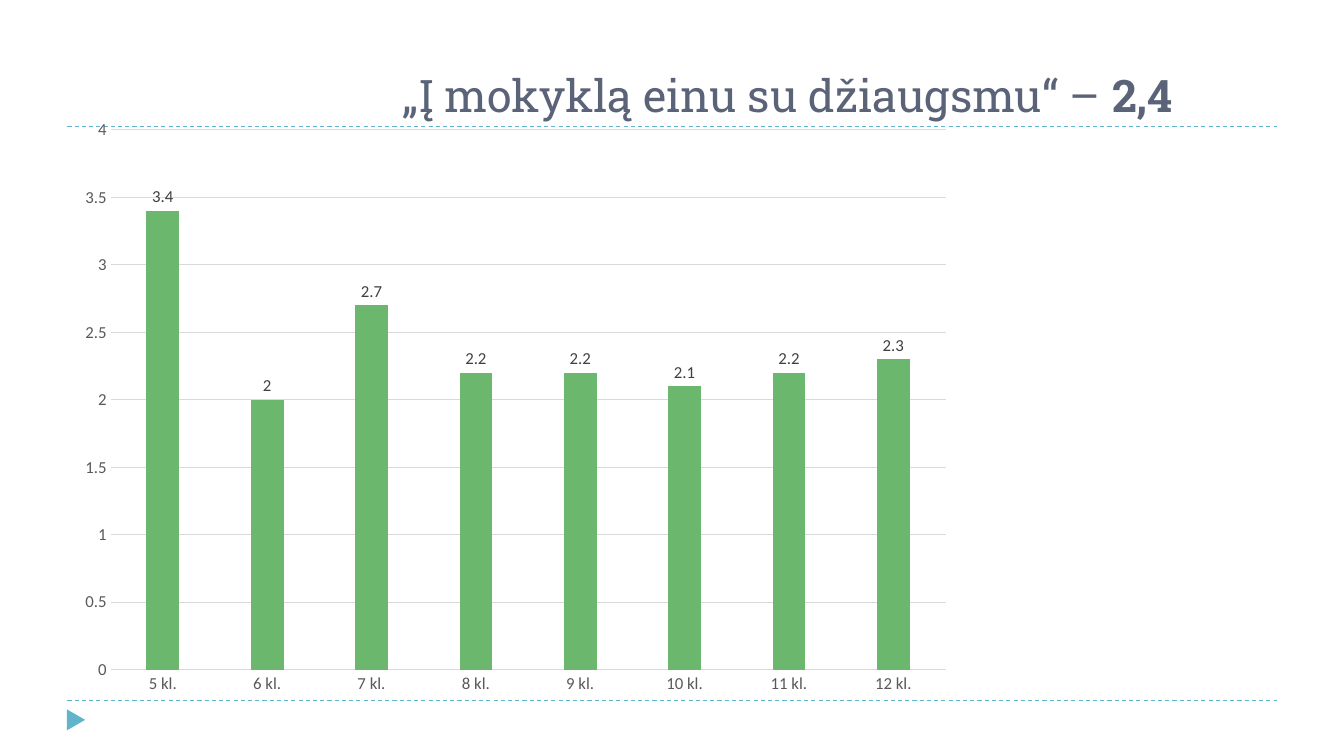
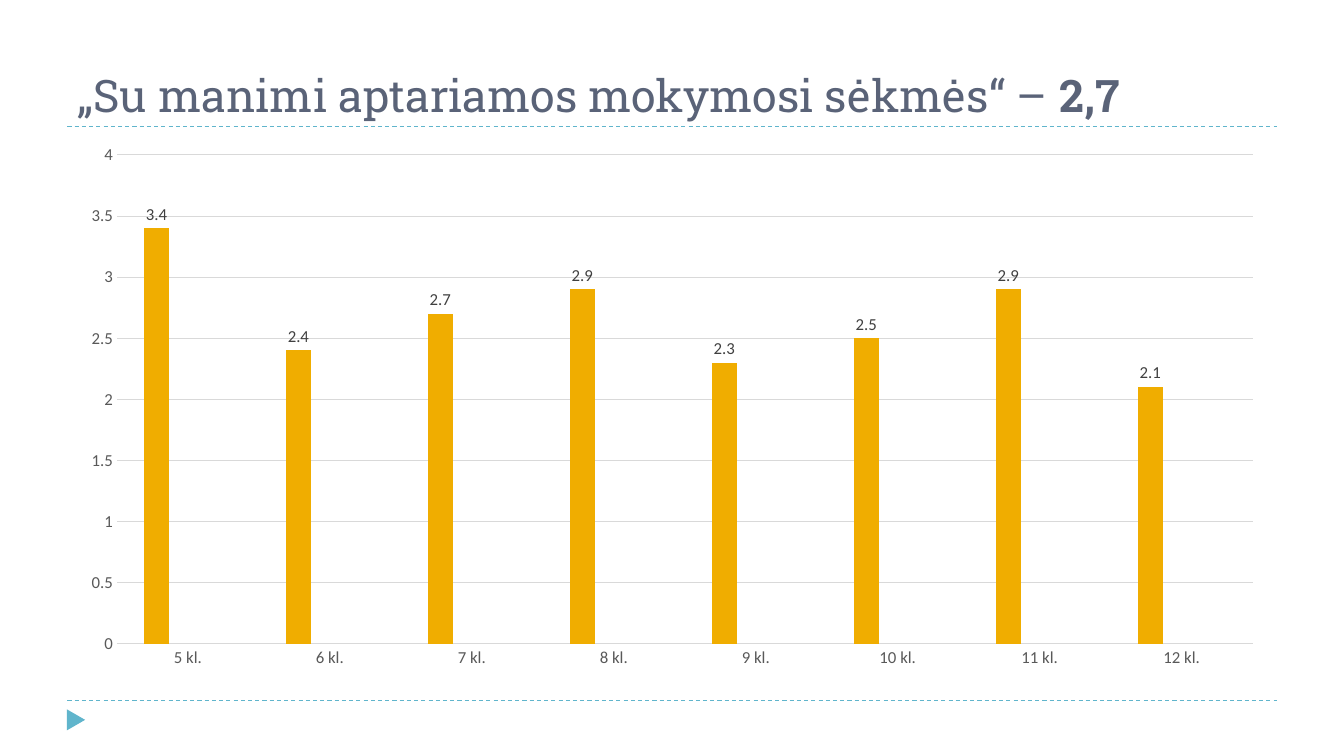
"""Build two slides with column charts of school survey scores by class."""
import dataclasses

import lxml.etree
import pptx
import pptx.chart.data
import pptx.chart.series
import pptx.dml.color
import pptx.dml.line
import pptx.enum.chart
import pptx.enum.dml
import pptx.enum.shapes
import pptx.enum.text
import pptx.oxml.ns
import pptx.shapes.base
import pptx.slide
import pptx.text.text
import pptx.util

Cm = pptx.util.Cm
Pt = pptx.util.Pt
Align = pptx.enum.text.PP_ALIGN

INK = "5A6378"
TEAL = "60B5CC"
ROSE = "E66C7D"
GREEN = "6BB76D"
AMBER = "F0AD00"
GRID = "D9D9D9"
AXIS = "595959"
LABEL = "404040"

LEFT, WIDTH = 1.7, 30.48
RULES = (3.18, 17.65)
CLASSES = [f"{grade} kl." for grade in range(5, 13)]


@dataclasses.dataclass(frozen=True)
class Page:
    title: str
    score: str
    align: Align
    indent: float
    box: tuple[float, float, float, float]
    values: tuple[float, ...]
    colors: tuple[str, ...]


PAGES = (
    Page("„Į mokyklą einu su džiaugsmu“ – ", "2,4", Align.CENTER, 5.84,
         (LEFT, 2.72, 22.58, 15.06),
         (3.4, 2, 2.7, 2.2, 2.2, 2.1, 2.2, 2.3), (GREEN,)),
    Page("„Su manimi aptariamos mokymosi sėkmės“ – ", "2,7", Align.LEFT, 0,
         (LEFT, 3.38, WIDTH, 13.72),
         (3.4, 2.4, 2.7, 2.9, 2.3, 2.5, 2.9, 2.1), (AMBER, TEAL, ROSE)),
)


def color(code: str) -> pptx.dml.color.RGBColor:
    return pptx.dml.color.RGBColor.from_string(code)


def style(font: pptx.text.text.Font, name: str, size: float, code: str) -> None:
    font.name = name
    font.size = Pt(size)
    font.color.rgb = color(code)


def stroke(line: pptx.dml.line.LineFormat, code: str) -> None:
    line.color.rgb = color(code)
    line.width = Pt(0.75)


def place(shape: pptx.shapes.base.BaseShape, *box: float) -> None:
    shape.left, shape.top, shape.width, shape.height = map(Cm, box)


def frame(layout: pptx.slide.SlideLayout, slide: pptx.slide.Slide) -> None:
    title = layout.placeholders[0]
    place(title, LEFT, 0.43, WIDTH, 2.75)
    text = title.text_frame
    text.vertical_anchor = pptx.enum.text.MSO_ANCHOR.BOTTOM
    text.auto_size = pptx.enum.text.MSO_AUTO_SIZE.NONE
    text.word_wrap = True

    parts = []
    for top in RULES:
        rule = slide.shapes.add_connector(
            pptx.enum.shapes.MSO_CONNECTOR.STRAIGHT,
            Cm(LEFT), Cm(top), Cm(LEFT + WIDTH), Cm(top))
        stroke(rule.line, TEAL)
        rule.line.dash_style = pptx.enum.dml.MSO_LINE.DASH
        lxml.etree.SubElement(rule.element.spPr, pptx.oxml.ns.qn("a:effectLst"))
        parts.append(rule)

    arrow = slide.shapes.add_shape(
        pptx.enum.shapes.MSO_SHAPE.ISOSCELES_TRIANGLE,
        Cm(1.65), Cm(17.91), Cm(0.53), Cm(0.46))
    arrow.rotation = 90
    arrow.shadow.inherit = False
    arrow.fill.solid()
    arrow.fill.fore_color.rgb = color(TEAL)
    arrow.line.fill.background()
    parts.append(arrow)

    for part in parts:
        layout.shapes.element.append(part.element)


def head(slide: pptx.slide.Slide, page: Page) -> None:
    para = slide.shapes.title.text_frame.paragraphs[0]
    para.alignment = page.align
    props = para._p.get_or_add_pPr()
    props.set("marL", str(int(Cm(page.indent))))
    props.set("indent", "0")
    for text, bold in ((page.title, False), (page.score, True)):
        run = para.add_run()
        run.text = text
        style(run.font, "Roboto Slab", 32, INK)
        run.font.bold = bold


def paint(series: pptx.chart.series.BarSeries, code: str) -> None:
    series.invert_if_negative = False
    series.format.fill.solid()
    series.format.fill.fore_color.rgb = color(code)
    labels = series.data_labels
    labels.show_value = True
    labels.position = pptx.enum.chart.XL_LABEL_POSITION.OUTSIDE_END
    style(labels.font, "Calibri", 12, LABEL)


def plot(slide: pptx.slide.Slide, page: Page) -> None:
    data = pptx.chart.data.CategoryChartData()
    data.categories = CLASSES
    for index in range(len(page.colors)):
        values = page.values if index == 0 else [None] * len(CLASSES)
        data.add_series(f"Series {index + 1}", values)
    chart = slide.shapes.add_chart(
        pptx.enum.chart.XL_CHART_TYPE.COLUMN_CLUSTERED,
        *map(Cm, page.box), data).chart
    chart.has_legend = False
    chart.has_title = False
    style(chart.font, "Calibri", 10, "000000")

    bars = chart.plots[0]
    bars.vary_by_categories = False
    bars.gap_width = 219
    bars.overlap = -27
    for series, code in zip(bars.series, page.colors):
        paint(series, code)

    for axis in (chart.category_axis, chart.value_axis):
        axis.major_tick_mark = pptx.enum.chart.XL_TICK_MARK.NONE
        axis.minor_tick_mark = pptx.enum.chart.XL_TICK_MARK.NONE
        style(axis.tick_labels.font, "Calibri", 12, AXIS)
    stroke(chart.category_axis.format.line, GRID)
    scale = chart.value_axis
    scale.minimum_scale, scale.maximum_scale = 0, 4
    scale.major_unit = 0.5
    scale.format.line.fill.background()
    stroke(scale.major_gridlines.format.line, GRID)


def main() -> None:
    deck = pptx.Presentation()
    deck.slide_width, deck.slide_height = Cm(33.87), Cm(19.05)
    layout = deck.slide_layouts.get_by_name("Title Only")
    slides = [deck.slides.add_slide(layout) for _ in PAGES]
    frame(layout, slides[0])
    for slide, page in zip(slides, PAGES):
        head(slide, page)
        plot(slide, page)
    deck.save("out.pptx")


if __name__ == "__main__":
    main()
